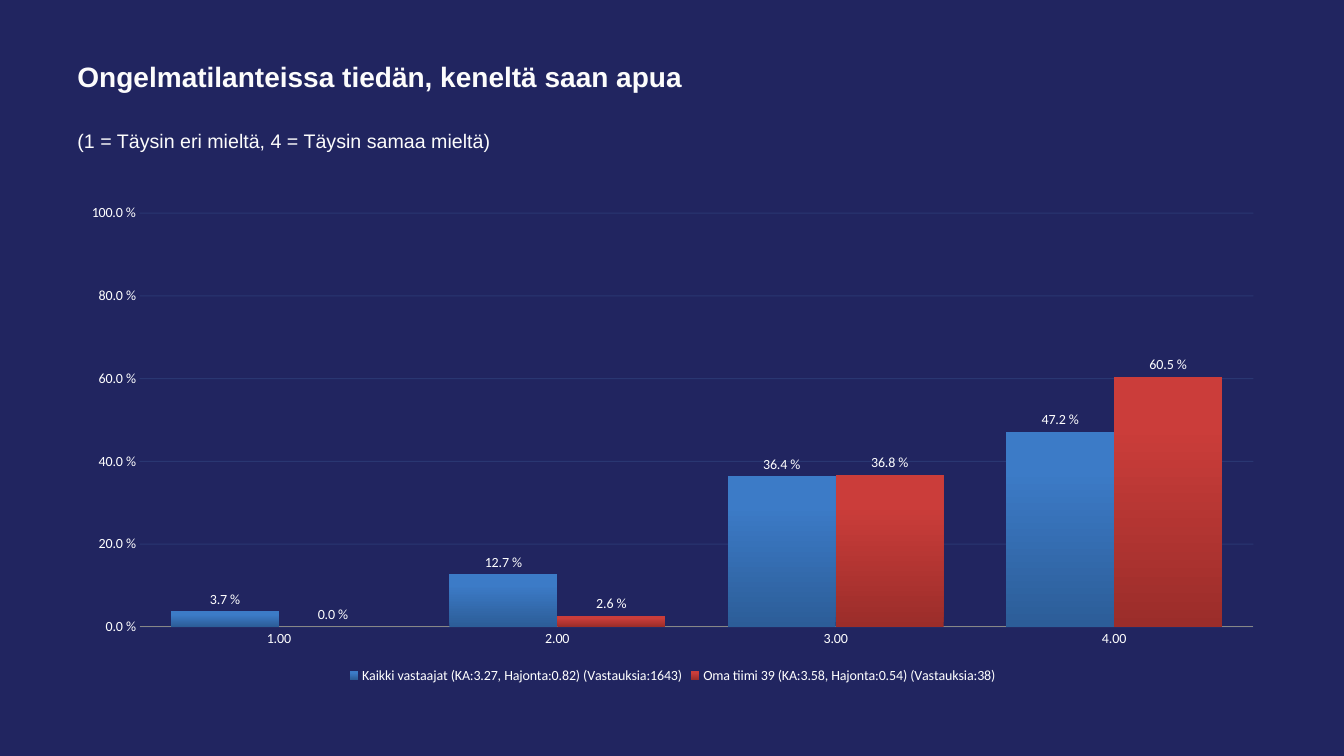
from lxml import etree
from pptx import Presentation
from pptx.chart.data import CategoryChartData
from pptx.dml.color import RGBColor
from pptx.enum import chart as ce, text as te
from pptx.oxml.ns import qn
from pptx.util import Inches, Pt

BACKGROUND = RGBColor(0x21, 0x25, 0x60)
HEADING = RGBColor(0xFC, 0xFC, 0xFC)
WHITE = RGBColor(0xFF, 0xFF, 0xFF)
GRID = RGBColor(0x4F, 0x81, 0xBD)
AXIS = RGBColor(0x87, 0x87, 0x87)
BLUE_DARK, BLUE = RGBColor(0x2C, 0x5D, 0x98), RGBColor(0x3C, 0x7B, 0xC7)
RED_DARK, RED = RGBColor(0x9B, 0x2D, 0x2A), RGBColor(0xCB, 0x3D, 0x3A)

LEFT, WIDTH = Inches(0.67), Inches(12)
PERCENT = "0.0\\ %"
RATINGS = ["1.00", "2.00", "3.00", "4.00"]
# Name, shares, colour at the foot of a bar, colour at its top
GROUPS = [
    ("Kaikki vastaajat (KA:3.27, Hajonta:0.82) (Vastauksia:1643)",
     (0.037, 0.127, 0.364, 0.472), BLUE_DARK, BLUE),
    ("Oma tiimi 39 (KA:3.58, Hajonta:0.54) (Vastauksia:38)",
     (0, 0.026, 0.368, 0.605), RED_DARK, RED),
]


def add_heading(slide, wording, top, height, size, anchor, bold=False):
    frame = slide.shapes.add_textbox(LEFT, top, WIDTH, height).text_frame
    frame.word_wrap = True
    frame.vertical_anchor = anchor
    run = frame.paragraphs[0].add_run()
    run.text = wording
    run.font.name = "Arial"
    run.font.size = Pt(size)
    run.font.bold = bold
    run.font.color.rgb = HEADING


def style_bars(series, foot, top):
    """Shade the bars from foot to top and put their shares above them."""
    fill = series.format.fill
    fill.gradient()
    fill.gradient_angle = 90
    for stop, color, position in zip(fill.gradient_stops, (foot, top), (0, 0.8)):
        stop.color.rgb = color
        stop.position = position
    series.invert_if_negative = False
    labels = series.data_labels
    labels.show_value = True
    labels.number_format = PERCENT
    labels.number_format_is_linked = False
    labels.position = ce.XL_LABEL_POSITION.OUTSIDE_END


def style_axes(chart):
    rating_axis, share_axis = chart.category_axis, chart.value_axis
    for axis in (rating_axis, share_axis):
        axis.major_tick_mark = axis.minor_tick_mark = ce.XL_TICK_MARK.NONE
    rating_axis.format.line.color.rgb = AXIS
    rating_axis.format.line.width = Pt(0.75)

    share_axis.minimum_scale, share_axis.maximum_scale = 0, 1
    share_axis.major_unit = 0.2
    share_axis.tick_labels.number_format = PERCENT
    share_axis.tick_labels.number_format_is_linked = False
    share_axis.format.line.fill.background()

    grid_line = share_axis.major_gridlines.format.line
    grid_line.width = Pt(0.75)
    grid_line.color.rgb = GRID
    grid_color = share_axis.major_gridlines._xAx.find(
        qn("c:majorGridlines")).find(".//" + qn("a:srgbClr"))
    etree.SubElement(grid_color, qn("a:alpha"), val="20000")


def add_answers_chart(slide):
    answers = CategoryChartData()
    answers.categories = RATINGS
    for name, shares, _, _ in GROUPS:
        answers.add_series(name, shares)
    chart = slide.shapes.add_chart(
        ce.XL_CHART_TYPE.COLUMN_CLUSTERED, LEFT, Inches(1.94), WIDTH,
        Inches(4.88), answers).chart
    chart.has_title = False
    chart.font.name = "Calibri"
    chart.font.size = Pt(10)
    chart.font.color.rgb = WHITE
    chart.has_legend = True
    chart.legend.position = ce.XL_LEGEND_POSITION.BOTTOM
    chart.legend.include_in_layout = False

    plot = chart.plots[0]
    plot.vary_by_categories = False
    plot.gap_width = 58
    plot.overlap = 0
    for series, (_, _, foot, top) in zip(plot.series, GROUPS):
        style_bars(series, foot, top)
    style_axes(chart)


def main():
    deck = Presentation()
    deck.slide_width, deck.slide_height = Inches(13.33), Inches(7.5)
    slide = deck.slides.add_slide(deck.slide_layouts[6])
    slide.background.fill.solid()
    slide.background.fill.fore_color.rgb = BACKGROUND
    add_heading(slide, "Ongelmatilanteissa tiedän, keneltä saan apua",
                Inches(0.36), Inches(0.79), 20, te.MSO_ANCHOR.MIDDLE, bold=True)
    add_heading(slide, "(1 = Täysin eri mieltä, 4 = Täysin samaa mieltä)",
                Inches(1.23), Inches(0.59), 14, te.MSO_ANCHOR.TOP)
    add_answers_chart(slide)
    deck.save("out.pptx")


if __name__ == "__main__":
    main()
